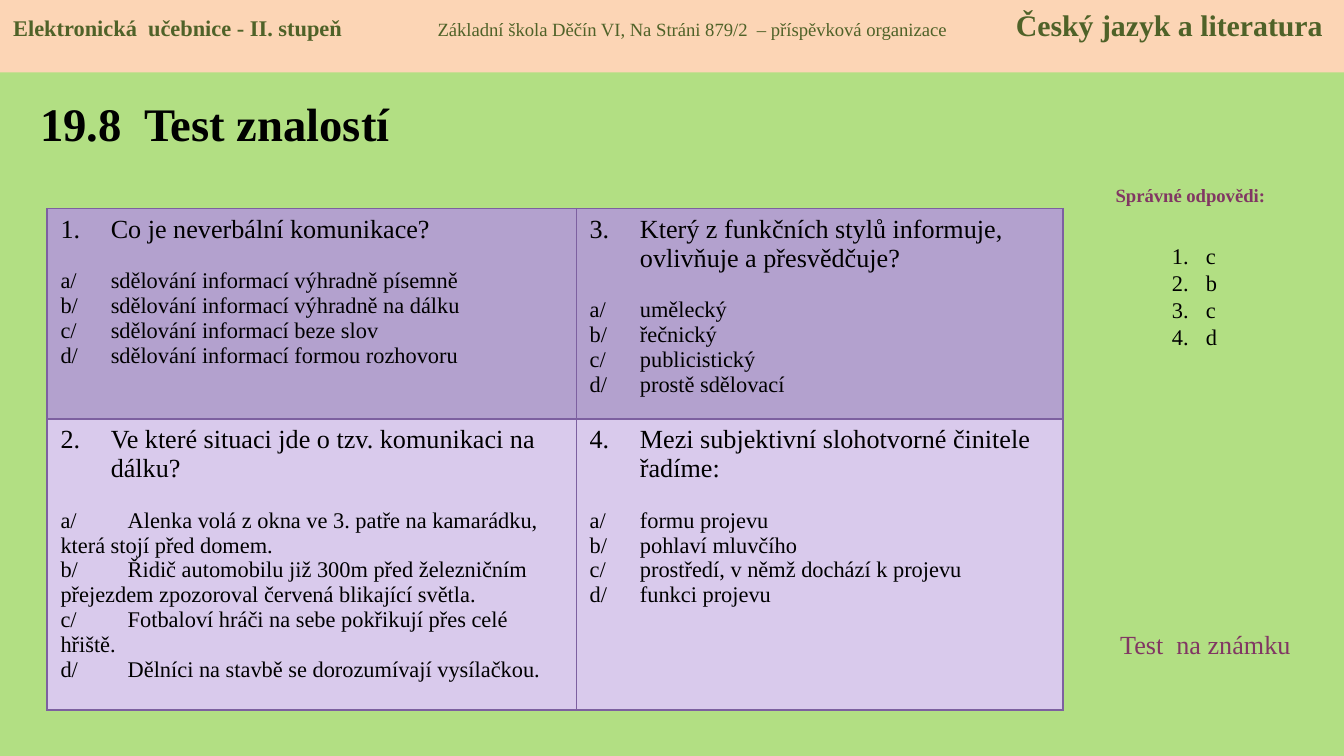
from lxml.etree import SubElement
from pptx import Presentation
from pptx.dml.color import RGBColor
from pptx.enum.shapes import MSO_SHAPE
from pptx.enum.text import MSO_ANCHOR, PP_ALIGN
from pptx.oxml import parse_xml
from pptx.oxml.ns import nsdecls, qn
from pptx.util import Cm, Pt

GREEN = RGBColor(0xB2, 0xDF, 0x83)
PEACH = RGBColor(0xFC, 0xD5, 0xB5)
OLIVE = RGBColor(0x4F, 0x62, 0x28)
PLUM = RGBColor(0x81, 0x37, 0x63)
BLACK = RGBColor(0, 0, 0)
VIOLET = RGBColor(0xB3, 0xA1, 0xCE)
LILAC = RGBColor(0xD9, 0xCA, 0xEC)
BORDER = RGBColor(0x7D, 0x60, 0xA0)

HANGING = Cm(0.95)

HEADER = [
    ("Elektronická  učebnice - II. stupeň", 12, True),
    ("\tZákladní škola Děčín VI, Na Stráni 879/2  – příspěvková organizace", 10, False),
    ("\tČeský jazyk a literatura", 16, True),
]
QUESTIONS = [
    ("Co je neverbální komunikace?", HANGING, [
        "sdělování informací výhradně písemně",
        "sdělování informací výhradně na dálku",
        "sdělování informací beze slov",
        "sdělování informací formou rozhovoru"]),
    ("Ve které situaci jde o tzv. komunikaci na dálku?", 0, [
        "Alenka volá z okna ve 3. patře na kamarádku, která stojí před domem.",
        "Řidič automobilu již 300m před železničním přejezdem zpozoroval "
        "červená blikající světla.",
        "Fotbaloví hráči na sebe pokřikují přes celé hřiště.",
        "Dělníci na stavbě se dorozumívají vysílačkou."]),
    ("Který z funkčních stylů informuje, ovlivňuje a přesvědčuje?", HANGING, [
        "umělecký", "řečnický", "publicistický", "prostě sdělovací"]),
    ("Mezi subjektivní slohotvorné činitele řadíme:", HANGING, [
        "formu projevu", "pohlaví mluvčího",
        "prostředí, v němž dochází k projevu", "funkci projevu"]),
]


class QuizSlide:
    font_name = "Times New Roman"

    def __init__(self, presentation):
        self.slide = presentation.slides.add_slide(presentation.slide_layouts[6])
        self.slide.background.fill.solid()
        self.slide.background.fill.fore_color.rgb = GREEN

    def style(self, paragraph, size, color=BLACK, bold=False):
        font = paragraph.font
        font.name, font.size, font.bold = self.font_name, Pt(size), bold
        font.color.rgb = color

    def indent(self, paragraph, width):
        properties = paragraph._p.get_or_add_pPr()
        properties.set("marL", str(width))
        properties.set("indent", str(-width))
        return properties

    def number(self, paragraph, width, start=1):
        properties = self.indent(paragraph, width)
        SubElement(properties, qn("a:buFont"), typeface=self.font_name)
        SubElement(properties, qn("a:buAutoNum"), type="arabicPeriod", startAt=str(start))

    def tabs(self, paragraph, *positions):
        stops = SubElement(paragraph._p.get_or_add_pPr(), qn("a:tabLst"))
        for position in positions:
            SubElement(stops, qn("a:tab"), pos=str(position), algn="l")

    def text_box(self, left, top, width, height):
        shape = self.slide.shapes.add_textbox(Cm(left), Cm(top), Cm(width), Cm(height))
        shape.text_frame.word_wrap = True
        return shape.text_frame

    def label(self, text, left, top, width, height, size, color=BLACK, bold=False,
              align=PP_ALIGN.LEFT, anchor=MSO_ANCHOR.TOP):
        frame = self.text_box(left, top, width, height)
        frame.vertical_anchor = anchor
        paragraph = frame.paragraphs[0]
        paragraph.text = text
        paragraph.alignment = align
        self.style(paragraph, size, color, bold)

    def numbered_list(self, items, left, top, width, height):
        frame = self.text_box(left, top, width, height)
        for index, item in enumerate(items):
            paragraph = frame.add_paragraph() if index else frame.paragraphs[0]
            paragraph.text = item
            self.number(paragraph, Cm(0.64))
            paragraph.line_spacing = Pt(14.5)
            self.style(paragraph, 12)

    def header(self, parts, width, height):
        shape = self.slide.shapes.add_shape(MSO_SHAPE.RECTANGLE, 0, 0, width, height)
        shape.shadow.inherit = False
        shape.fill.solid()
        shape.fill.fore_color.rgb = PEACH
        shape.line.fill.background()
        shape.text_frame.vertical_anchor = MSO_ANCHOR.TOP
        paragraph = shape.text_frame.paragraphs[0]
        paragraph.alignment = PP_ALIGN.LEFT
        self.tabs(paragraph, Cm(8.02), Cm(18.95))
        self.style(paragraph, 12, OLIVE)
        for text, size, bold in parts:
            run = paragraph.add_run()
            run.text = text
            run.font.size, run.font.bold = Pt(size), bold
            run.font.color.rgb = OLIVE

    def question(self, cell, number, text, answer_indent, answers):
        paragraph = cell.text_frame.paragraphs[0]
        paragraph.text = text
        self.number(paragraph, HANGING, number)
        self.style(paragraph, 14)
        for index, (letter, answer) in enumerate(zip("abcd", answers)):
            paragraph = cell.text_frame.add_paragraph()
            paragraph.text = f"{letter}/\t{answer}"
            self.indent(paragraph, answer_indent)
            self.tabs(paragraph, HANGING)
            if index == 0:
                paragraph.space_before = Pt(13.3)
            self.style(paragraph, 12)

    def paint(self, cell, color):
        cell.fill.solid()
        cell.fill.fore_color.rgb = color
        properties = cell._tc.get_or_add_tcPr()
        for index, side in enumerate(("lnL", "lnR", "lnT", "lnB")):
            properties.insert(index, parse_xml(
                f'<a:{side} {nsdecls("a")} w="{Pt(0.75)}"><a:solidFill>'
                f'<a:srgbClr val="{BORDER}"/></a:solidFill></a:{side}>'))

    def question_table(self, questions, left, top, column_widths, row_heights):
        table = self.slide.shapes.add_table(
            len(row_heights), len(column_widths), Cm(left), Cm(top),
            Cm(sum(column_widths)), Cm(sum(row_heights))).table
        for column, width in zip(table.columns, column_widths):
            column.width = Cm(width)
        for row, height in zip(table.rows, row_heights):
            row.height = Cm(height)
        for index, question in enumerate(questions):
            column, row = divmod(index, len(row_heights))
            cell = table.cell(row, column)
            self.question(cell, index + 1, *question)
            self.paint(cell, (VIOLET, LILAC)[row])


def main():
    presentation = Presentation()
    presentation.slide_width, presentation.slide_height = Cm(25.4), Cm(14.29)
    quiz = QuizSlide(presentation)
    quiz.label("19.8  Test znalostí", 0.51, 1.5, 8.1, 1.65, 25, bold=True,
               anchor=MSO_ANCHOR.MIDDLE)
    quiz.label("Správné odpovědi:", 20.5, 3.35, 3.99, 0.69, 10, PLUM, True, PP_ALIGN.CENTER)
    quiz.question_table(QUESTIONS, 0.89, 3.94, (10, 9.2), (3.98, 5.5))
    quiz.numbered_list("cbcd", 21.9, 4.45, 1.4, 2.8)
    quiz.label("Test  na známku", 20.92, 11.76, 3.99, 0.86, 14, PLUM)
    quiz.header(HEADER, presentation.slide_width, Cm(1.37))
    presentation.save("out.pptx")


if __name__ == "__main__":
    main()
